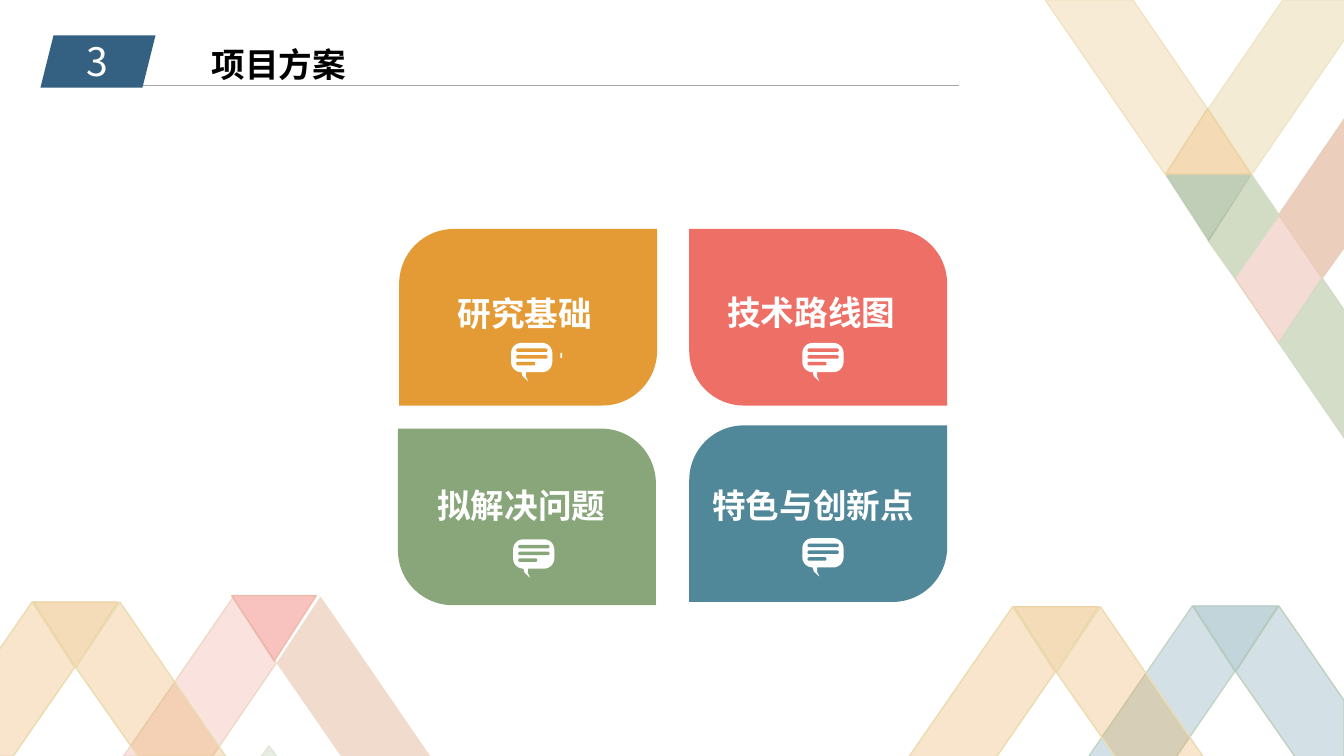
from lxml.etree import SubElement
from pptx import Presentation
from pptx.dml.color import RGBColor
from pptx.enum.shapes import MSO_CONNECTOR, MSO_SHAPE
from pptx.enum.text import MSO_AUTO_SIZE, PP_ALIGN
from pptx.oxml.ns import qn
from pptx.util import Cm, Pt

FONT = "Noto Sans CJK SC"
WHITE = "FFFFFF"
ORANGE, GREEN, CORAL, TEAL = "E49B35", "89A67A", "ED6F65", "508799"

# Fill, opacity in percent, outline, corner points in cm
RIBBONS = [
    ("EE8F82", 25, "EED9C6", [(5.87, 15.06), (6.96, 16.71), (5.36, 19.05), (3.12, 19.05)]),
    ("F1DBCC", 100, "F1DBCC", [(8.08, 15.06), (10.82, 19.05), (8.61, 19.05), (6.99, 16.71)]),
    ("E7B05E", 25, "EFE3C2", [(26.34, 0), (28.55, 0), (30.43, 2.74), (29.36, 4.39)]),
    ("EFE3C2", 71, "EEE6C8",
     [(32.33, 0), (33.9, 0), (33.9, 0.97), (31.55, 4.39), (30.45, 2.74)]),
    ("D57053", 25, "EAD3BE", [(32.23, 5.41), (33.32, 7.01), (32.23, 8.64), (31.12, 7.01)]),
    ("EBCEBC", 100, "EACDBA", [(33.9, 2.97), (33.9, 6.2), (33.32, 7.01), (32.23, 5.41)]),
    ("D2DBC4", 100, "D3DDC7", [(31.55, 4.42), (32.23, 5.41), (31.12, 7.01), (30.45, 6.07)]),
    ("D3DDC7", 100, "D3DCC6", [(33.32, 7.01), (33.9, 7.85), (33.9, 11.07), (32.23, 8.64)]),
    (ORANGE, 36, "EBD3A2", [(30.43, 2.74), (31.52, 4.39), (29.39, 4.39)]),
    ("A2B894", 25, "E0E6D3", [(6.78, 18.8), (7.06, 19.18), (6.5, 19.18)]),
    (TEAL, 25, "C4D5C6", [(30.05, 15.27), (31.12, 16.92), (29.62, 19.1), (27.41, 19.1)]),
    (TEAL, 25, "BFD1BD",
     [(32.23, 15.27), (33.87, 17.65), (33.87, 19.1), (32.66, 19.1), (31.14, 16.92)]),
]

# Left, top, fill, opacity, outline, outline opacity
FOLDS = [
    (29.39, 4.42, "88A378", 53, "B3C4A5", 53),
    (30.07, 15.27, TEAL, 35, "B5CAC1", 100),
    (5.84, 15.01, "ED5249", 35, "EFBBAB", 100),
]

# Title, fill, rounded diagonal, card corner, title box (left, top, width), icon corner
CARDS = [
    ("研究基础", ORANGE, (0.31, 0), (10.06, 5.77), (11.28, 7.26, 4.06), (12.88, 8.64)),
    ("拟解决问题", GREEN, (0, 0.31), (10.03, 10.8), (10.77, 12.09, 5.28), (12.93, 13.59)),
    ("技术路线图", CORAL, (0, 0.31), (17.37, 5.77), (18.08, 7.24, 5.28), (20.22, 8.64)),
    ("特色与创新点", TEAL, (0.31, 0), (17.37, 10.72), (17.7, 12.09, 6.07), (20.22, 13.56)),
]


def paint(fill_format, color, opacity=100):
    fill_format.solid()
    fill_format.fore_color.rgb = RGBColor.from_string(color)
    if opacity < 100:
        color_element = fill_format._xPr.find(qn("a:solidFill"))[0]
        SubElement(color_element, qn("a:alpha"), val=str(opacity * 1000))


def add_polygon(slide, points, fill, opacity=100, outline=None, outline_opacity=100):
    corners = [(Cm(x), Cm(y)) for x, y in points]
    builder = slide.shapes.build_freeform(*corners[0])
    builder.add_line_segments(corners[1:], close=True)
    shape = builder.convert_to_shape()
    shape.shadow.inherit = False
    paint(shape.fill, fill, opacity)
    if outline:
        shape.line.width = Pt(1)
        paint(shape.line.fill, outline, outline_opacity)
    else:
        shape.line.fill.background()


def add_preset(slide, kind, left, top, width, height, fill, adjustments=()):
    shape = slide.shapes.add_shape(kind, Cm(left), Cm(top), Cm(width), Cm(height))
    shape.shadow.inherit = False
    paint(shape.fill, fill)
    shape.line.fill.background()
    for index, value in enumerate(adjustments):
        shape.adjustments[index] = value


def add_label(slide, text, left, top, width, height=1.27, size=24, color=WHITE,
              bold=True, align=PP_ALIGN.LEFT, wrap=True):
    box = slide.shapes.add_textbox(Cm(left), Cm(top), Cm(width), Cm(height))
    frame = box.text_frame
    frame.word_wrap = wrap
    frame.auto_size = MSO_AUTO_SIZE.SHAPE_TO_FIT_TEXT
    paragraph = frame.paragraphs[0]
    paragraph.alignment = align
    run = paragraph.add_run()
    run.text = text
    run.font.name = FONT
    run.font.size = Pt(size)
    run.font.bold = bold
    run.font.color.rgb = RGBColor.from_string(color)
    SubElement(run._r.get_or_add_rPr(), qn("a:ea"), typeface=FONT)


def add_rule(slide, left, right, y, color):
    connector = slide.shapes.add_connector(
        MSO_CONNECTOR.STRAIGHT, Cm(left), Cm(y), Cm(right), Cm(y))
    connector.line.width = Pt(0.5)
    paint(connector.line.fill, color)
    SubElement(connector._element.spPr, qn("a:effectLst"))


def add_fold(slide, left, top, fill, opacity, outline, outline_opacity=100):
    """Downward triangle where two ribbons overlap."""
    points = [(left, top), (left + 2.13, top), (left + 1.07, top + 1.65)]
    add_polygon(slide, points, fill, opacity, outline, outline_opacity)


def add_orange_chevron(slide, left, top):
    """Fold with a ribbon falling away on each side."""
    add_fold(slide, left, top, ORANGE, 35, "EBD3A3")
    left_leg = [(-0.03, 0), (1.04, 1.65), (-0.51, 3.89), (-2.72, 3.89)]
    right_leg = [(2.18, 0), (4.85, 3.89), (2.64, 3.89), (1.07, 1.65)]
    for leg, outline in ((left_leg, "EBDCB0"), (right_leg, "EBDCB2")):
        points = [(left + x, top + y) for x, y in leg]
        add_polygon(slide, points, ORANGE, 25, outline)


def add_speech_icon(slide, left, top, bar_color):
    tail = [(0.25, 0.7), (0.29, 0.84), (0.43, 0.97), (0.37, 0.84), (0.38, 0.7)]
    add_polygon(slide, [(left + x, top + y) for x, y in tail], WHITE)
    add_preset(slide, MSO_SHAPE.ROUNDED_RECTANGLE, left, top, 1.04, 0.74, WHITE, [0.35])
    for row, width in enumerate((0.79, 0.79, 0.48)):
        add_preset(slide, MSO_SHAPE.ROUNDED_RECTANGLE, left + 0.13, top + 0.14 + row * 0.17,
                   width, 0.09, bar_color, [0.5])


def add_card(slide, title, fill, diagonal, corner, title_box, icon):
    add_preset(slide, MSO_SHAPE.ROUND_2_DIAG_RECTANGLE, *corner, 6.5, 4.45, fill, diagonal)
    add_speech_icon(slide, *icon, fill)
    add_label(slide, title, *title_box)


def add_header(slide):
    add_rule(slide, 2.21, 24.16, 2.16, "A6A6A6")
    add_preset(slide, MSO_SHAPE.PARALLELOGRAM, 1.02, 0.89, 2.9, 1.32, "346182")
    add_label(slide, "3", 1.04, 0.81, 2.84, 1.45, size=28, bold=False,
              align=PP_ALIGN.CENTER)
    add_label(slide, "项目方案", 5.08, 0.97, 3.94, color="000000", wrap=False)


def main():
    presentation = Presentation()
    presentation.slide_width = Cm(33.87)
    presentation.slide_height = Cm(19.05)
    slide = presentation.slides.add_slide(presentation.slide_layouts[6])
    for fill, opacity, outline, points in RIBBONS:
        add_polygon(slide, points, fill, opacity, outline)
    for fold in FOLDS:
        add_fold(slide, *fold)
    for left, top in ((25.55, 15.29), (0.84, 15.17)):
        add_orange_chevron(slide, left, top)
    add_header(slide)
    for card in CARDS:
        add_card(slide, *card)
    add_preset(slide, MSO_SHAPE.RECTANGLE, 14.12, 8.89, 0.05, 0.13, WHITE)
    presentation.save("out.pptx")


if __name__ == "__main__":
    main()
